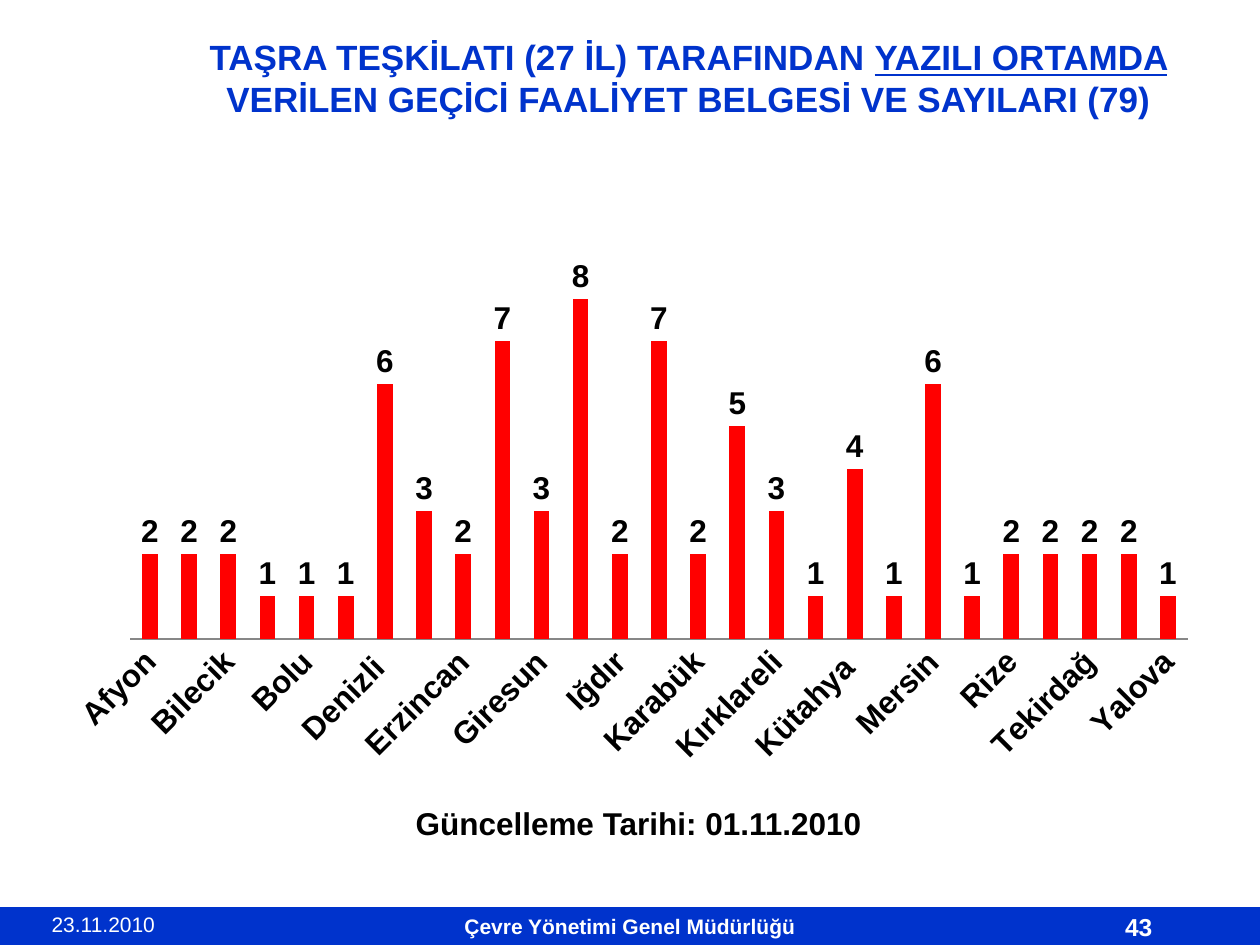
"""Build a slide with a column chart of temporary permits per province."""
from dataclasses import dataclass
from lxml import etree
from pptx import Presentation, util as u
from pptx.chart.data import CategoryChartData
from pptx.dml.color import RGBColor as Rgb
from pptx.enum import chart as ch, shapes, text
from pptx.oxml.ns import qn


@dataclass(frozen=True)
class Theme:
    face: str = "Arial"
    blue: Rgb = Rgb(0x00, 0x33, 0xCC)
    red: Rgb = Rgb(0xFF, 0x00, 0x00)
    black: Rgb = Rgb(0x00, 0x00, 0x00)
    white: Rgb = Rgb(0xFF, 0xFF, 0xFF)
    gray: Rgb = Rgb(0x87, 0x87, 0x87)
    head: int = 20
    body: int = 18
    page: int = 14
    foot: int = 12


theme = Theme()
deck = Presentation()
deck.slide_width, deck.slide_height = u.Cm(25.4), u.Cm(19.05)
slide = deck.slides.add_slide(deck.slide_layouts[6])


def style(font, size, color, bold=True):
    font.name, font.size, font.bold = theme.face, u.Pt(size), bold
    font.color.rgb = color


def write(box, parts, size, color, bold=True, align=text.PP_ALIGN.LEFT):
    frame = box.text_frame
    frame.word_wrap = True
    para = frame.paragraphs[0]
    para.alignment = align
    for part in parts:
        run = para.add_run()
        run.text = part
        style(run.font, size, color, bold)
    return frame


band = slide.shapes.add_shape(
    shapes.MSO_SHAPE.RECTANGLE, 0, u.Cm(18.29), deck.slide_width, u.Cm(0.76))
band.shadow.inherit = False
band.fill.solid()
band.fill.fore_color.rgb = theme.blue
band.line.fill.background()
write(band, ["Çevre Yönetimi Genel Müdürlüğü"], theme.foot, theme.white,
      align=text.PP_ALIGN.CENTER)

title = slide.shapes.add_textbox(u.Cm(2.97), u.Cm(0.58), u.Cm(21.82), u.Cm(1.98))
frame = write(title, ["TAŞRA TEŞKİLATI (27 İL) TARAFINDAN ", "YAZILI ORTAMDA ",
                      "VERİLEN GEÇİCİ FAALİYET BELGESİ VE SAYILARI (79)"],
              theme.head, theme.blue, align=text.PP_ALIGN.CENTER)
frame.vertical_anchor = text.MSO_ANCHOR.MIDDLE
frame.paragraphs[0].runs[1].font.underline = True

notes = [
    ("43", 22.43, 18.26, 1.98, theme.page, theme.white, True),
    ("23.11.2010", 0.79, 18.26, 5.56, theme.foot, theme.white, False),
    ("Güncelleme Tarihi: 01.11.2010", 8.13, 16.08, 10.11, theme.body, theme.black, True),
]
for words, left, top, width, size, color, bold in notes:
    box = slide.shapes.add_textbox(u.Cm(left), u.Cm(top), u.Cm(width), u.Cm(0.8))
    write(box, [words], size, color, bold)

counts = {
    "Afyon": 2, "Balıkesir": 2, "Bilecik": 2, "Burdur": 1, "Bolu": 1,
    "Çorum": 1, "Denizli ": 6, "Düzce": 3, "Erzincan": 2, "Gaziantep": 7,
    "Giresun": 3, "Hatay": 8, "Iğdır": 2, "İstanbul": 7, "Karabük": 2,
    "Kırıkkale": 5, "Kırklareli": 3, "Kilis ": 1, "Kütahya ": 4,
    "Mardin ": 1, "Mersin": 6, "Muğla": 1, "Rize": 2, "Şanlıurfa": 2,
    "Tekirdağ": 2, "Trabzon": 2, "Yalova": 1,
}
data = CategoryChartData()
data.categories = list(counts)
data.add_series("Series 1", list(counts.values()))
chart = slide.shapes.add_chart(
    ch.XL_CHART_TYPE.COLUMN_CLUSTERED, u.Cm(0.99), u.Cm(4.95),
    u.Cm(23.42), u.Cm(10.72), data).chart
chart.has_legend = chart.has_title = False
style(chart.font, theme.body, theme.black)

plot = chart.plots[0]
plot.gap_width = 150
plot.vary_by_categories = False
fill = plot.series[0].format.fill
fill.solid()
fill.fore_color.rgb = theme.red
plot.has_data_labels = True
labels = plot.data_labels
labels.show_value = True
labels.position = ch.XL_LABEL_POSITION.OUTSIDE_END
style(labels.font, theme.body, theme.black)

value = chart.value_axis
value.minimum_scale, value.maximum_scale = 0, 9
value.has_major_gridlines = False
value.visible = False
axis = chart.category_axis
axis.major_tick_mark = ch.XL_TICK_MARK.NONE
axis.format.line.color.rgb = theme.gray
axis.format.line.width = u.Pt(0.75)
style(axis.tick_labels.font, theme.body, theme.black)
axis._element.find(qn("c:txPr")).find(qn("a:bodyPr")).set("rot", "-2700000")
skip = etree.Element(qn("c:tickLblSkip"), val="2")
axis._element.find(qn("c:noMultiLvlLbl")).addprevious(skip)

area = chart._chartSpace.chart.plotArea
for old in area.findall(qn("c:layout")):
    area.remove(old)
layout = etree.Element(qn("c:layout"))
area.insert(0, layout)
manual = etree.SubElement(layout, qn("c:manualLayout"))
for tag, val in [("layoutTarget", "inner"), ("xMode", "edge"), ("yMode", "edge"),
                 ("x", "0.07"), ("y", "0.02"), ("w", "0.91"), ("h", "0.72")]:
    etree.SubElement(manual, qn("c:" + tag), val=val)

deck.save("out.pptx")
